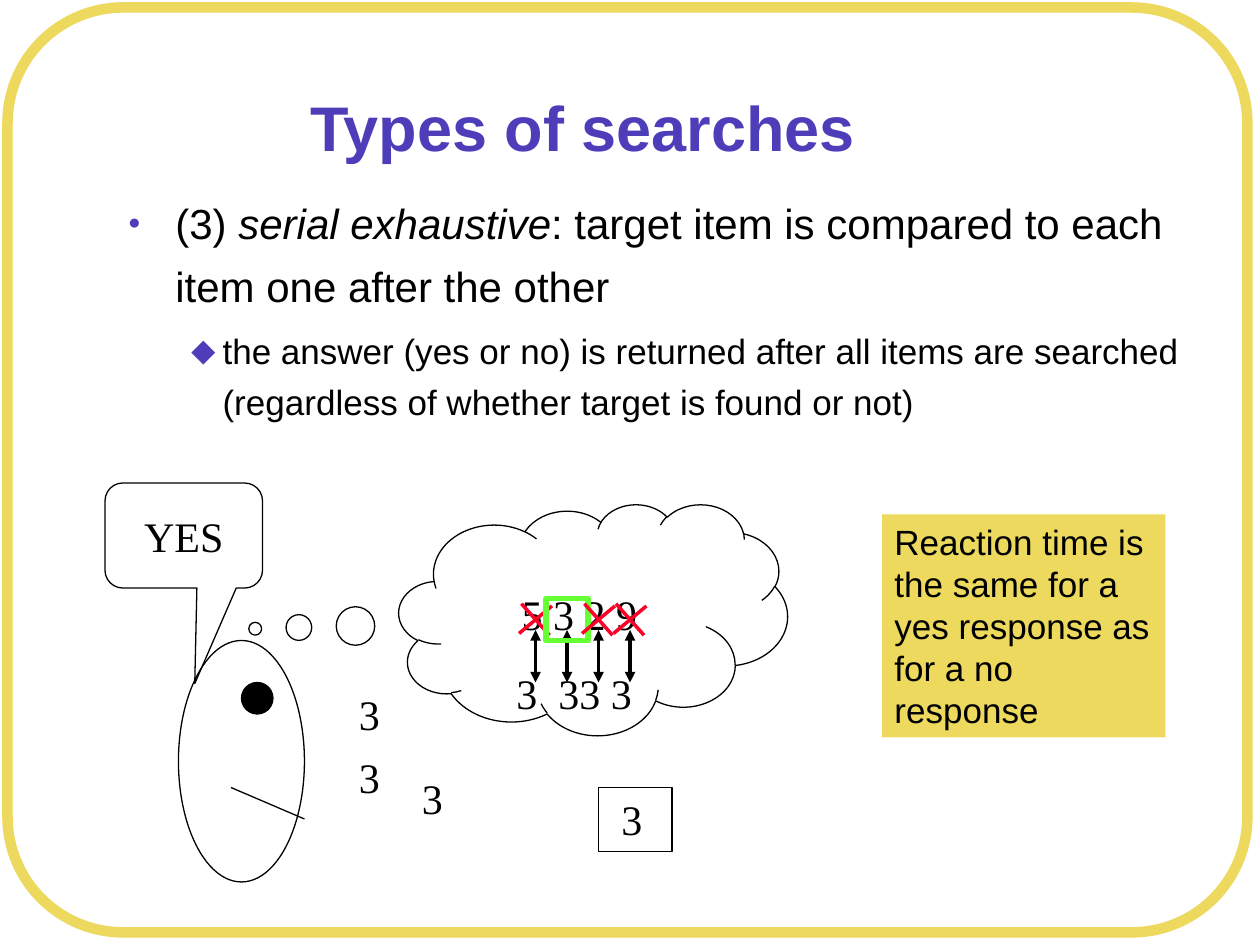
"""Builds the slide on serial exhaustive memory search."""
from lxml import etree
from pptx import Presentation
from pptx.dml.color import RGBColor
from pptx.enum import shapes, text
from pptx.oxml import ns
from pptx.util import Pt

BLACK = RGBColor(0x00, 0x00, 0x00)
PURPLE = RGBColor(0x4E, 0x3D, 0xB9)
YELLOW = RGBColor(0xEC, 0xD9, 0x5E)
RED = RGBColor(0xFC, 0x01, 0x28)
GREEN = RGBColor(0x66, 0xFF, 0x33)
SHAPE = shapes.MSO_SHAPE
MIDDLE = text.MSO_ANCHOR.MIDDLE
LEFT, CENTER = text.PP_ALIGN.LEFT, text.PP_ALIGN.CENTER

prs = Presentation()
prs.slide_width, prs.slide_height = Pt(720), Pt(540)
s = prs.slides.add_slide(prs.slide_layouts[1])


def add_box(kind, x, y, w, h, words="", fill=None, line=BLACK, width=0.75, adj=(),
            size=24, font="Times New Roman", align=LEFT, anchor=text.MSO_ANCHOR.TOP, wrap=False):
    """Add a preset shape, or a text box when kind is None."""
    at = Pt(x), Pt(y), Pt(w), Pt(h)
    if kind is None:
        sp = s.shapes.add_textbox(*at)
    else:
        sp = s.shapes.add_shape(kind, *at)
        sp.shadow.inherit = False
        for i, value in enumerate(adj):
            sp.adjustments[i] = value
        for part, colour in ((sp.fill, fill), (sp.line.fill, line)):
            if colour is None:
                part.background()
            else:
                part.solid()
                part.fore_color.rgb = colour
        if line is not None:
            sp.line.width = Pt(width)
    if words:
        tf = sp.text_frame
        tf.word_wrap, tf.vertical_anchor = wrap, anchor
        p = tf.paragraphs[0]
        p.alignment = align
        r = p.add_run()
        r.text = words
        r.font.size, r.font.name, r.font.color.rgb = Pt(size), font, BLACK
    return sp


def add_line(x1, y1, x2, y2, colour=BLACK, width=2, arrows=False):
    """Add a straight line, with arrowheads at both ends if asked."""
    c = s.shapes.add_connector(shapes.MSO_CONNECTOR.STRAIGHT, Pt(x1), Pt(y1), Pt(x2), Pt(y2))
    c.line.color.rgb, c.line.width = colour, Pt(width)
    if arrows:
        for end in ("a:headEnd", "a:tailEnd"):
            etree.SubElement(c.line._get_or_add_ln(), ns.qn(end), type="triangle")
    etree.SubElement(c._element.spPr, ns.qn("a:effectLst"))


title, body = s.placeholders
title.left, title.top, title.width, title.height = Pt(66), Pt(30), Pt(534), Pt(90)
tf = title.text_frame
tf.vertical_anchor = MIDDLE
p = tf.paragraphs[0]
p.alignment, p.line_spacing = CENTER, 0.9
r = p.add_run()
r.text = "Types of searches"
r.font.size, r.font.name, r.font.bold, r.font.color.rgb = Pt(36), "Arial", True, PURPLE

body.left, body.top, body.width, body.height = Pt(66), Pt(102), Pt(618), Pt(145.4)
tf = body.text_frame
tf.auto_size = text.MSO_AUTO_SIZE.NONE
items = [
    (24, 1.25, 27, -27, "●", 50,
     [("(3)", False), (" serial exhaustive", True),
      (": target item is compared to each item one after the other", False)]),
    (20, 1.2, 54, -18, "⬥", 100,
     [("the answer (yes or no) is returned after all items are searched "
       "(regardless of whether target is found or not)", False)]),
]
for level, (size, spacing, margin, indent, bullet, percent, runs) in enumerate(items):
    p = tf.add_paragraph() if level else tf.paragraphs[0]
    p.level, p.line_spacing, p.space_before = level, spacing, Pt(0.3 * size)
    pPr = p._p.get_or_add_pPr()
    pPr.set("marL", str(Pt(margin)))
    pPr.set("indent", str(Pt(indent)))
    colour = etree.SubElement(pPr, ns.qn("a:buClr"))
    etree.SubElement(colour, ns.qn("a:srgbClr"), val=str(PURPLE))
    etree.SubElement(pPr, ns.qn("a:buSzPct"), val=str(percent * 1000))
    etree.SubElement(pPr, ns.qn("a:buFont"), typeface="Arial")
    etree.SubElement(pPr, ns.qn("a:buChar"), char=bullet)
    for words, italic in runs:
        r = p.add_run()
        r.text = words
        r.font.size, r.font.name, r.font.italic, r.font.color.rgb = Pt(size), "Arial", italic, BLACK

add_box(SHAPE.ROUNDED_RECTANGLE, 4.3, 4.3, 708.5, 528.5, line=YELLOW, width=6, adj=(0.125,))
add_box(SHAPE.CLOUD_CALLOUT, 228, 288, 222, 132, "5 3 2 9", adj=(-0.87, 0.04),
        align=CENTER, anchor=MIDDLE)

add_box(SHAPE.OVAL, 102, 366, 72, 138)
add_box(SHAPE.OVAL, 138, 390, 18, 18, fill=BLACK)
add_line(132, 450, 174, 468, width=0.75)
add_box(SHAPE.ROUNDED_RECTANGULAR_CALLOUT, 60, 276, 90, 60, "YES", adj=(0.07, 1.41, 0.17),
        align=CENTER, anchor=MIDDLE)

add_box(SHAPE.RECTANGLE, 342, 450, 42, 36.7, " 3", wrap=True)
for x, y in ((234, 438), (198, 390), (198, 426)):
    add_box(None, x, y, 26.6, 36, "3")

match_x = 324
for x, digit_x in ((306, 288), (match_x, 312), (342, 324), (360, 342)):
    add_box(None, digit_x, 378, 26.6, 36, "3")
    add_line(x, 360, x, 390, arrows=True)
    if x == match_x:
        add_box(SHAPE.RECTANGLE, x - 12, 342, 24, 24, line=GREEN, width=3)
    else:
        add_line(x - 8, 345, x + 8, 363, RED)
        add_line(x - 9.4, 362, x + 9.4, 346.3, RED)

add_box(SHAPE.RECTANGLE, 504, 294, 162, 127.4,
        "Reaction time is the same for a yes response as for a no response",
        fill=YELLOW, line=None, size=20, font="Arial", wrap=True)

prs.save("out.pptx")
